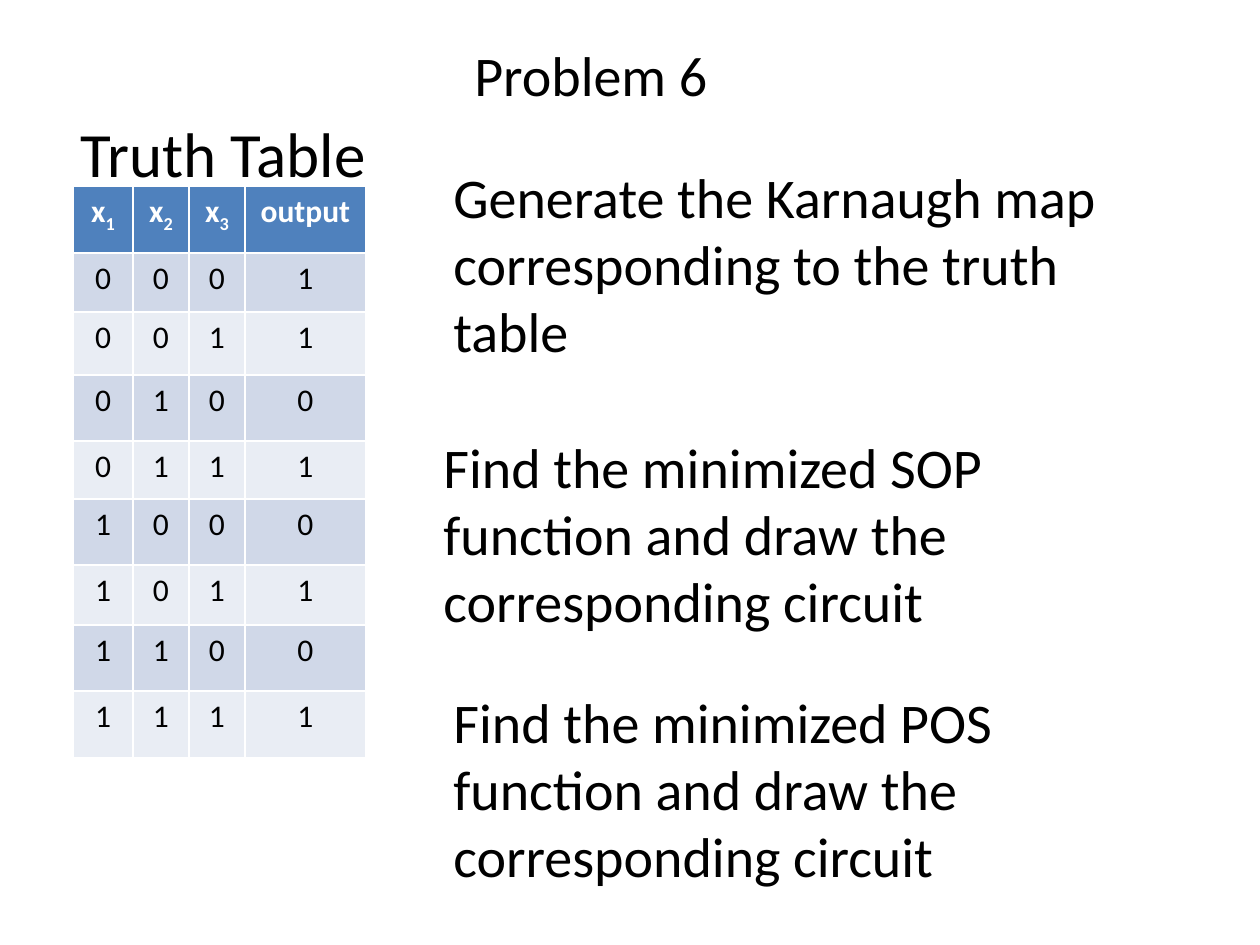
from itertools import product

from pptx import Presentation
from pptx.dml.color import RGBColor
from pptx.enum.text import MSO_ANCHOR as Anchor, PP_ALIGN as Align
from pptx.util import Emu, Pt

FONT = "Calibri"
BLACK, WHITE = "000000", "FFFFFF"
HEADER_FILL = "4F81BD"
BAND_FILLS = ["D0D8E8", "E9EDF4"]

TEXTS = [
    (" Truth Table", (54, 108, 331, 89), 36, Anchor.TOP),
    ("Generate the Karnaugh map corresponding to the truth table",
     (441, 158, 746, 210), 32, Anchor.MIDDLE),
    ("Problem 6", (462, 19, 300, 110), 32, Anchor.MIDDLE),
    ("Find the minimized SOP function and draw the corresponding circuit",
     (431, 428, 746, 210), 32, Anchor.MIDDLE),
    ("Find the minimized POS function and draw the corresponding circuit",
     (441, 683, 746, 210), 32, Anchor.MIDDLE),
]

HEADERS = [("x", "1"), ("x", "2"), ("x", "3"), ("output", "")]
OUTPUTS = [1, 1, 0, 1, 0, 1, 0, 1]
TABLE_LEFT, TABLE_TOP = 73, 186
COLUMN_WIDTHS = [60, 56, 56, 121]
ROW_HEIGHTS = [67, 59, 63, 66, 58, 66, 60, 66, 67]


def px(length):
    return Emu(round(length * 914400 / 126))


def color(value):
    return RGBColor.from_string(value)


def format_run(run, size, font_color, bold=False):
    run.font.name = FONT
    run.font.size = Pt(size)
    run.font.bold = bold
    run.font.color.rgb = color(font_color)


def add_text(slide, text, box, size, anchor):
    shape = slide.shapes.add_textbox(*map(px, box))
    text_frame = shape.text_frame
    text_frame.word_wrap = True
    text_frame.vertical_anchor = anchor
    text_frame.text = text
    format_run(text_frame.paragraphs[0].runs[0], size, BLACK)


def fill_cell(cell, text, subscript, fill, font_color, bold):
    cell.fill.solid()
    cell.fill.fore_color.rgb = color(fill)
    paragraph = cell.text_frame.paragraphs[0]
    paragraph.text = text
    paragraph.alignment = Align.CENTER
    if subscript:
        run = paragraph.add_run()
        run.text = subscript
        run.font._element.set("baseline", "-25000")
    for run in paragraph.runs:
        format_run(run, 18, font_color, bold)


def add_truth_table(slide):
    inputs = product([0, 1], repeat=3)
    rows = [[(str(bit), "") for bit in (*bits, output)]
            for bits, output in zip(inputs, OUTPUTS)]
    table = slide.shapes.add_table(
        len(ROW_HEIGHTS), len(COLUMN_WIDTHS), px(TABLE_LEFT), px(TABLE_TOP),
        px(sum(COLUMN_WIDTHS)), px(sum(ROW_HEIGHTS))).table
    for column, width in zip(table.columns, COLUMN_WIDTHS):
        column.width = px(width)
    for row, height in zip(table.rows, ROW_HEIGHTS):
        row.height = px(height)
    for i, values in enumerate([HEADERS] + rows):
        header = i == 0
        fill = HEADER_FILL if header else BAND_FILLS[(i - 1) % 2]
        for j, (text, subscript) in enumerate(values):
            fill_cell(table.cell(i, j), text, subscript, fill,
                      WHITE if header else BLACK, header)


def main():
    presentation = Presentation()
    presentation.slide_width, presentation.slide_height = px(1260), px(945)
    slide = presentation.slides.add_slide(presentation.slide_layouts[6])
    add_text(slide, *TEXTS[0])
    add_truth_table(slide)
    for text in TEXTS[1:]:
        add_text(slide, *text)
    presentation.save("out.pptx")


if __name__ == "__main__":
    main()
